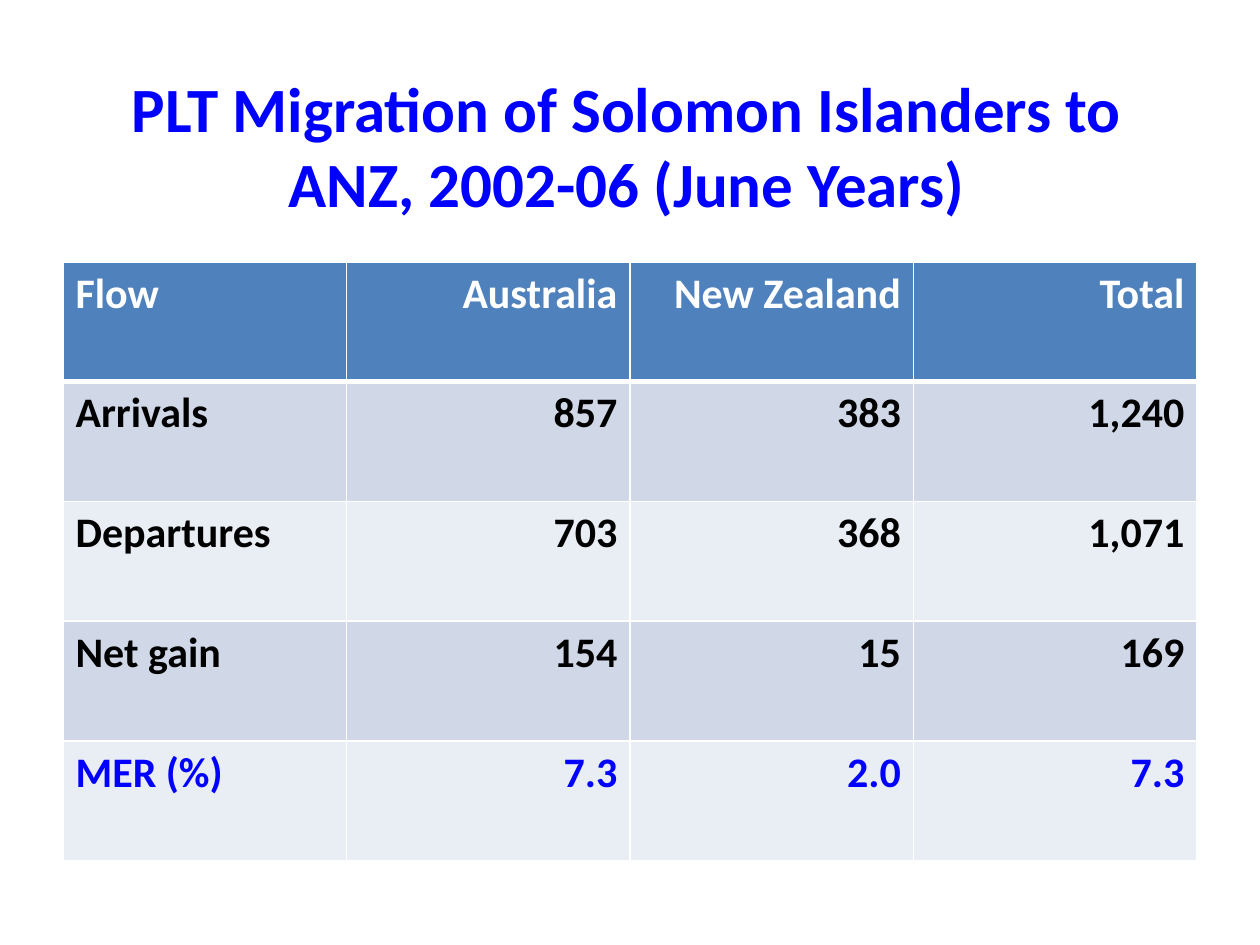
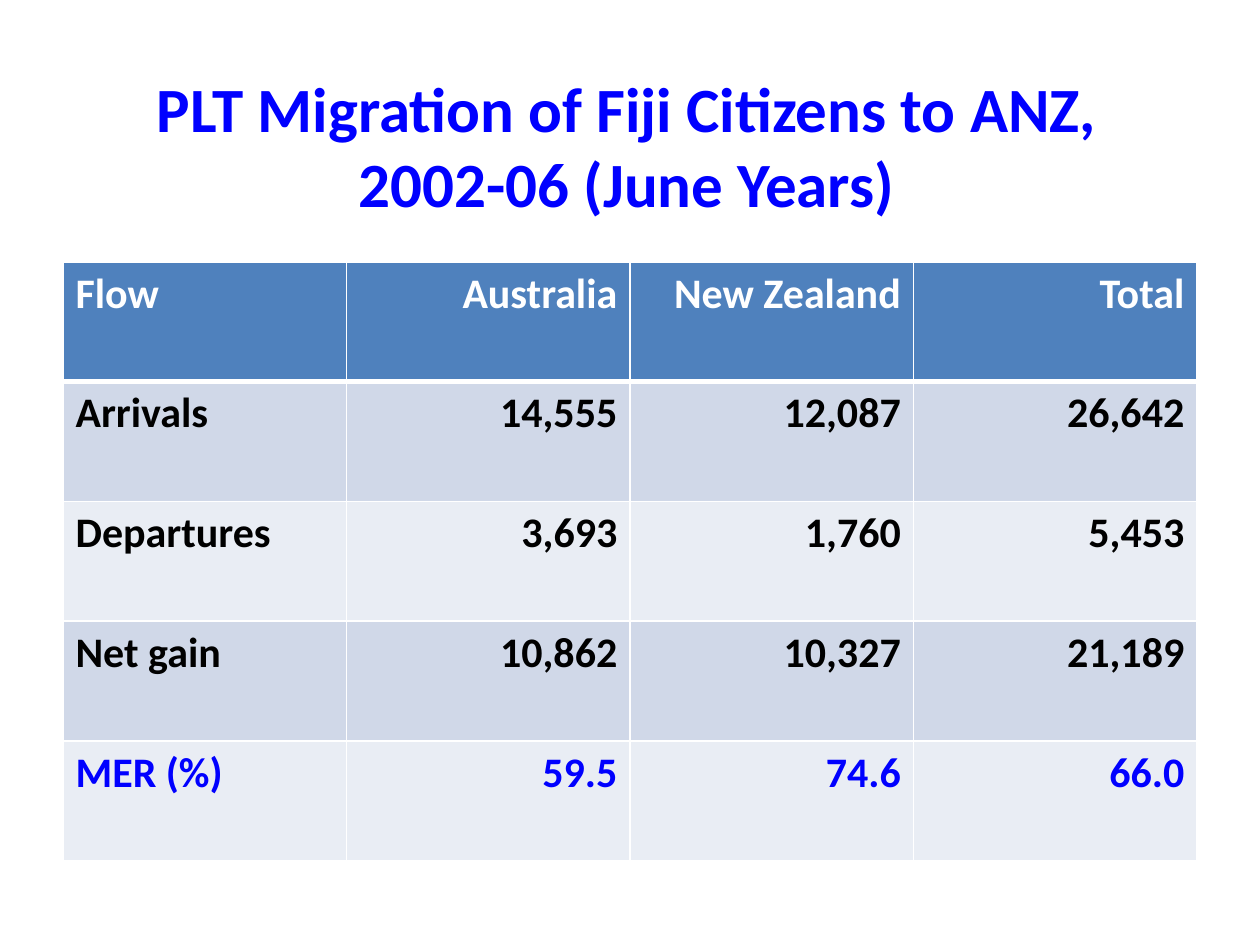
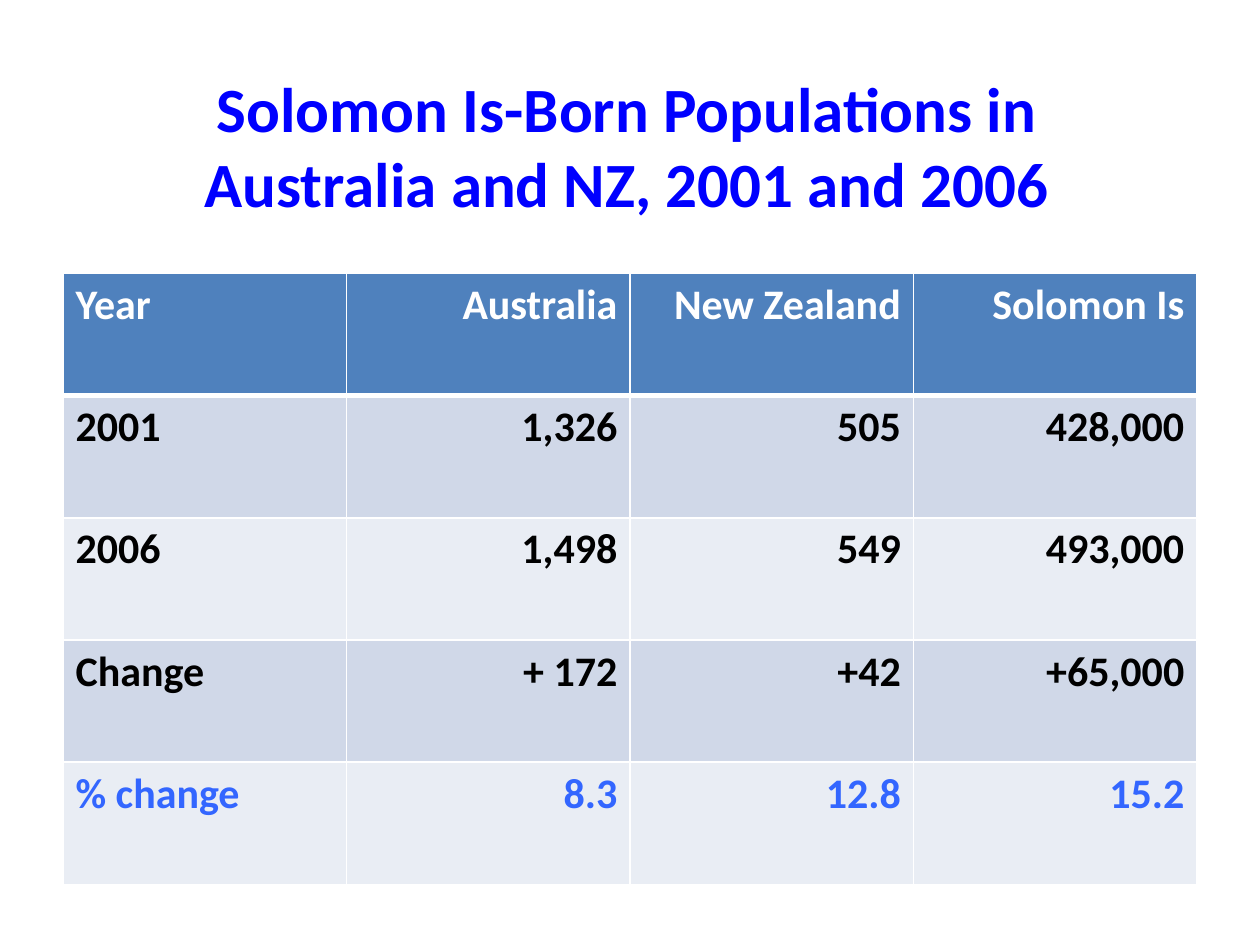
import dataclasses

import pptx
import pptx.dml.color
import pptx.enum.text
import pptx.oxml.ns
import pptx.util
from lxml import etree

Inches = pptx.util.Inches
Align = pptx.enum.text.PP_ALIGN


@dataclasses.dataclass(frozen=True)
class Theme:
    font: str = "Calibri"
    title_size: int = 36
    table_size: int = 24
    title: str = "0000FF"
    header_text: str = "FFFFFF"
    body_text: str = "000000"
    header_fill: str = "4F81BD"
    band_fills: tuple = ("D0D8E8", "E9EDF4")
    border: str = "FFFFFF"
    thin_border: float = 1
    thick_border: float = 3


THEME = Theme()

# Content: the last row of each table is highlighted
SLIDES = [
    {
        "title": "PLT Migration of Solomon Islanders to ANZ, 2002-06 (June Years)",
        "rows": [
            ("Flow", "Australia", "New Zealand", "Total"),
            ("Arrivals", "857", "383", "1,240"),
            ("Departures", "703", "368", "1,071"),
            ("Net gain", "154", "15", "169"),
            ("MER (%)", "7.3", "2.0", "7.3"),
        ],
        "highlight": "0000FF", "top": 2.08, "row_height": 0.95,
    },
    {
        "title": "PLT Migration of Fiji Citizens to ANZ, 2002-06 (June Years)",
        "rows": [
            ("Flow", "Australia", "New Zealand", "Total"),
            ("Arrivals", "14,555", "12,087", "26,642"),
            ("Departures", "3,693", "1,760", "5,453"),
            ("Net gain", "10,862", "10,327", "21,189"),
            ("MER (%)", "59.5", "74.6", "66.0"),
        ],
        "highlight": "0000FF", "top": 2.08, "row_height": 0.95,
    },
    {
        "title": "Solomon Is-Born Populations in Australia and NZ, 2001 and 2006",
        "rows": [
            ("Year", "Australia", "New Zealand", "Solomon Is"),
            ("2001", "1,326", "505", "428,000"),
            ("2006", "1,498", "549", "493,000"),
            ("Change", "+ 172", "+42", "+65,000"),
            ("% change", "8.3", "12.8", "15.2"),
        ],
        "highlight": "3366FF", "top": 2.17, "row_height": 0.97,
    },
]

# Layout in inches
TITLE_BOX = (0.83, 0.58, 8.29, 1.14)
TABLE_LEFT, TABLE_WIDTH = 0.5, 9


def rgb(color):
    return pptx.dml.color.RGBColor.from_string(color)


def write_text(text_frame, text, *, size, color, align, bold=True):
    paragraph = text_frame.paragraphs[0]
    paragraph.alignment = align
    run = paragraph.add_run()
    run.text = text
    run.font.name = THEME.font
    run.font.size = pptx.util.Pt(size)
    run.font.bold = bold
    run.font.color.rgb = rgb(color)


def add_borders(cell, is_header):
    """Each row draws its lower edge; only the header draws an upper one."""
    bottom = THEME.thick_border if is_header else THEME.thin_border
    edges = {"lnL": THEME.thin_border, "lnR": THEME.thin_border}
    if is_header:
        edges["lnT"] = THEME.thin_border
    edges["lnB"] = bottom
    properties = cell._tc.get_or_add_tcPr()
    qn = pptx.oxml.ns.qn
    for edge, width in edges.items():
        line = etree.SubElement(properties, qn(f"a:{edge}"), w=str(pptx.util.Pt(width)))
        fill = etree.SubElement(line, qn("a:solidFill"))
        etree.SubElement(fill, qn("a:srgbClr"), val=THEME.border)


def add_title(slide, text):
    title = slide.shapes.title
    title.left, title.top, title.width, title.height = map(Inches, TITLE_BOX)
    title.text_frame.word_wrap = True
    title.text_frame.vertical_anchor = pptx.enum.text.MSO_ANCHOR.MIDDLE
    write_text(title.text_frame, text, size=THEME.title_size,
               color=THEME.title, align=Align.CENTER)


def add_data_table(slide, rows, highlight, top, row_height):
    table = slide.shapes.add_table(
        len(rows), len(rows[0]), Inches(TABLE_LEFT), Inches(top),
        Inches(TABLE_WIDTH), Inches(row_height * len(rows))).table
    for row_index, row in enumerate(rows):
        is_header = row_index == 0
        if is_header:
            fill, color = THEME.header_fill, THEME.header_text
        else:
            fill = THEME.band_fills[(row_index - 1) % 2]
            color = highlight if row_index == len(rows) - 1 else THEME.body_text
        for column_index, text in enumerate(row):
            cell = table.cell(row_index, column_index)
            add_borders(cell, is_header)
            cell.fill.solid()
            cell.fill.fore_color.rgb = rgb(fill)
            write_text(cell.text_frame, text, size=THEME.table_size, color=color,
                       align=Align.RIGHT if column_index else Align.LEFT)


def main():
    presentation = pptx.Presentation()
    presentation.slide_width = Inches(10)
    presentation.slide_height = Inches(7.5)
    title_only = presentation.slide_layouts.get_by_name("Title Only")
    for content in SLIDES:
        slide = presentation.slides.add_slide(title_only)
        add_title(slide, content["title"])
        add_data_table(slide, content["rows"], content["highlight"],
                       content["top"], content["row_height"])
    presentation.save("out.pptx")


if __name__ == "__main__":
    main()
